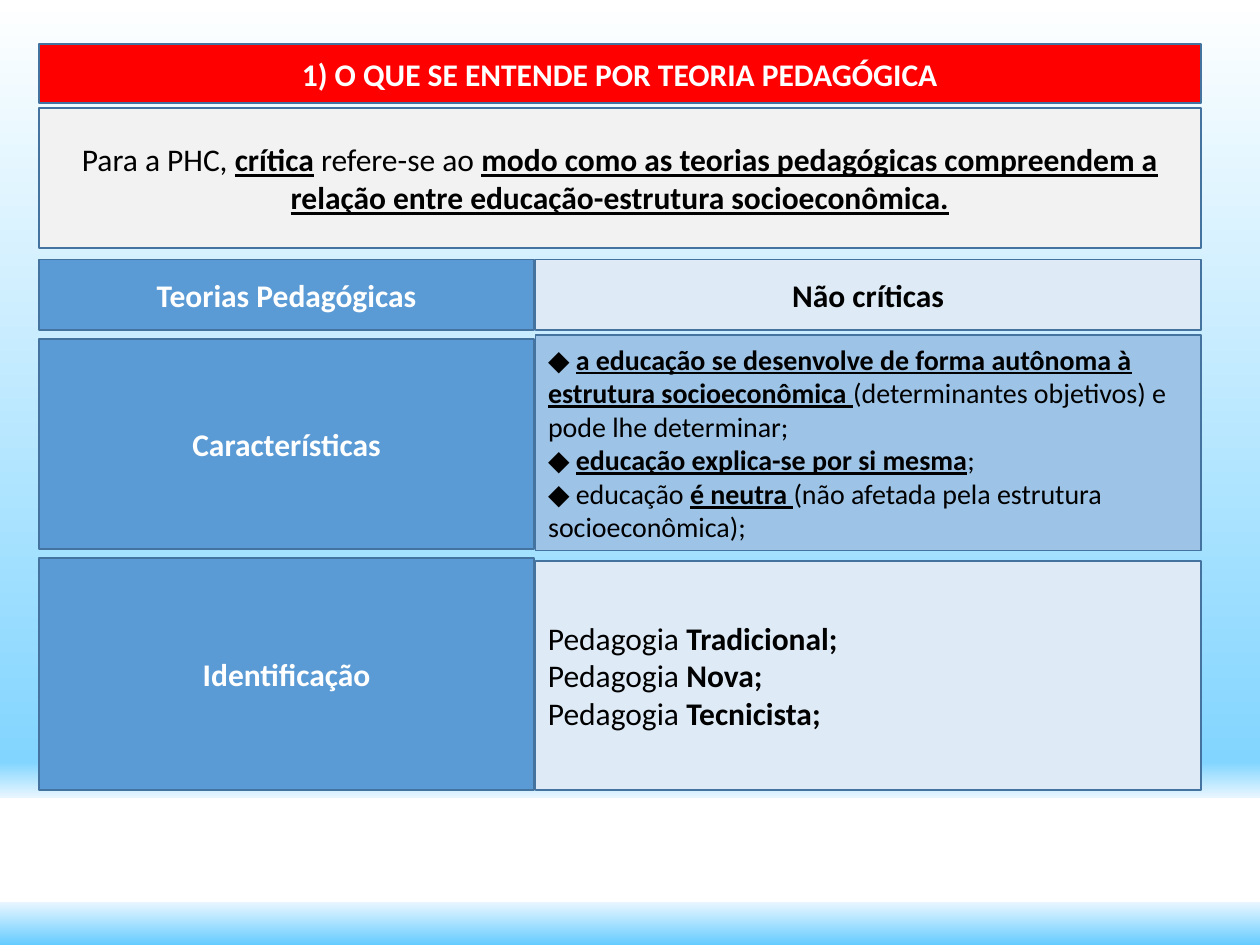
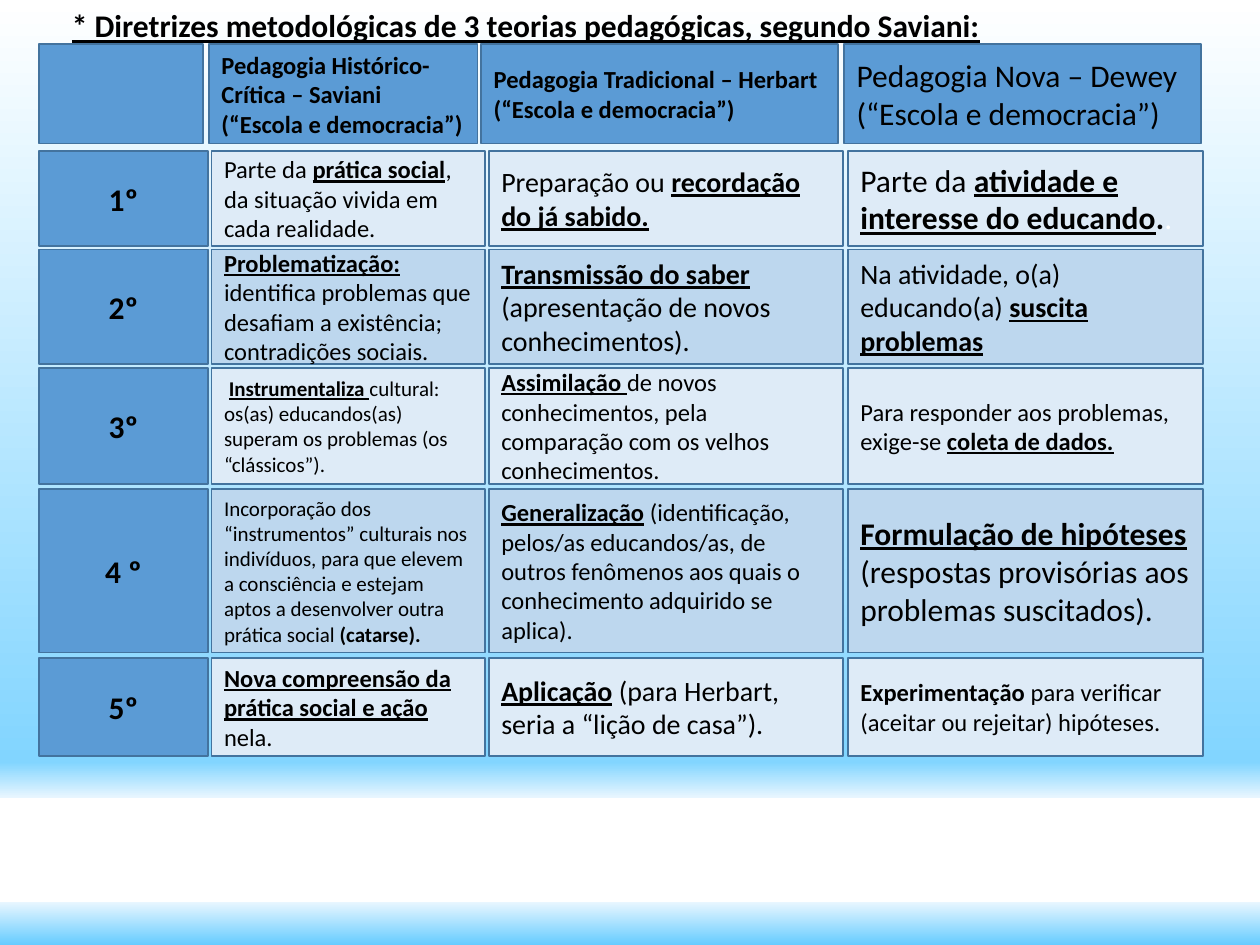
from lxml import etree
from pptx import Presentation
from pptx.dml.color import RGBColor
from pptx.enum.shapes import MSO_SHAPE
from pptx.enum.text import MSO_ANCHOR, MSO_AUTO_SIZE, PP_ALIGN
from pptx.oxml.ns import qn
from pptx.util import Inches, Pt

RECT = MSO_SHAPE.RECTANGLE
TOP, MIDDLE = MSO_ANCHOR.TOP, MSO_ANCHOR.MIDDLE
LEFT, CENTER = PP_ALIGN.LEFT, PP_ALIGN.CENTER
FIXED = MSO_AUTO_SIZE.NONE

WHITE = RGBColor(0xFF, 0xFF, 0xFF)
BLACK = RGBColor(0, 0, 0)
RED = RGBColor(0xFF, 0, 0)
GRAY = RGBColor(0xF2, 0xF2, 0xF2)
SKY = RGBColor(0x66, 0xCC, 0xFF)
AZURE = RGBColor(0x82, 0xD5, 0xFF)
MIST = RGBColor(0xE8, 0xF6, 0xFF)
BLUE = RGBColor(0x5B, 0x9B, 0xD5)
MID = RGBColor(0x9D, 0xC3, 0xE6)
SOFT = RGBColor(0xBD, 0xD7, 0xEE)
PALE = RGBColor(0xDE, 0xEB, 0xF7)
EDGE = RGBColor(0x43, 0x73, 0x9E)

FONT = "Calibri"
WIDTH, HEIGHT = 10, 7.5
EDGE_X, FULL = 0.31, 9.22

BANDS = [
    (0, 6.05, WHITE, AZURE),
    (6.05, 6.33, AZURE, MIST),
    (6.33, 7.16, WHITE, WHITE),
    (7.16, HEIGHT, MIST, SKY),
]

PAIR = [(EDGE_X, 3.93), (4.25, 5.28)]
TRAITS = [
    "◆ |_a educação se desenvolve de forma autônoma à estrutura socioeconômica "
    "|(determinantes objetivos) e pode lhe determinar;",
    "◆ |_educação explica-se por si mesma|;",
    "◆ educação |_é neutra |(não afetada pela estrutura socioeconômica);",
]
KINDS = [f"Pedagogia |!{name};" for name in ("Tradicional", "Nova", "Tecnicista")]

HEADS = [
    ((EDGE_X, 1.3), 14, ""),
    ((1.66, 2.13), 14, "!Pedagogia Histórico-Crítica – Saviani (“Escola e democracia”)"),
    ((3.82, 2.83), 14, "!Pedagogia Tradicional – Herbart (“Escola e democracia”)"),
    ((6.7, 2.83), 18, "Pedagogia Nova – Dewey (“Escola e democracia”)"),
]
COLS = [(1.68, 2.17), (3.88, 2.81), (6.73, 2.82)]
STEPS = [
    ("1º", (1.2, 0.75), [
        (14, "Parte da |_prática social|, da situação vivida em cada realidade."),
        (16, "Preparação ou |_recordação do já sabido."),
        (18, "Parte da |_atividade e interesse do educando|!.|~."),
    ]),
    ("2º", (1.98, 0.91), [
        (14, "_Problematização: |identifica problemas que desafiam a existência; "
             "contradições sociais."),
        (16, "_Transmissão do saber |(apresentação de novos conhecimentos)."),
        (16, "Na atividade, o(a) educando(a) |_suscita problemas"),
    ]),
    ("3º", (2.92, 0.92), [
        (12, " |_Instrumentaliza |cultural: os(as) educandos(as) superam os "
             "problemas (os “clássicos”)."),
        (14, "_Assimilação |de novos conhecimentos, pela comparação com os "
             "velhos conhecimentos."),
        (14, "Para responder aos problemas, exige-se |_coleta de dados."),
    ]),
    ("4 º", (3.88, 1.3), [
        (12, "Incorporação dos “instrumentos” culturais nos indivíduos, para que "
             "elevem a consciência e estejam aptos a desenvolver outra prática "
             "social |!(catarse)."),
        (14, "_Generalização| (identificação, pelos/as educandos/as, de outros "
             "fenômenos aos quais o conhecimento adquirido se aplica)."),
        (18, "_Formulação de hipóteses |(respostas provisórias aos problemas "
             "suscitados)."),
    ]),
    ("5º", (5.22, 0.78), [
        (14, "_Nova compreensão da prática social e ação |nela."),
        (16, "_Aplicação| (para Herbart, seria a “lição de casa”)."),
        (14, "!Experimentação| para verificar (aceitar ou rejeitar) hipóteses."),
    ]),
]


def add_runs(para, text):
    """Split text at bars; a leading _ ! or ~ marks underlined bold, bold or white."""
    for part in text.split("|"):
        mark = part[:1]
        run = para.add_run()
        run.text = part[1:] if mark in ("_", "!", "~") else part
        run.font.bold = mark in ("_", "!")
        run.font.underline = mark == "_"
        if mark == "~":
            run.font.color.rgb = WHITE


def write(shape, lines, size, color=BLACK, align=LEFT, anchor=MIDDLE):
    """Fill a shape with marked lines of text."""
    frame = shape.text_frame
    frame.word_wrap = True
    frame.auto_size = FIXED
    frame.vertical_anchor = anchor
    for i, line in enumerate(lines):
        para = frame.add_paragraph() if i else frame.paragraphs[0]
        if shape.is_placeholder:
            props = para._p.get_or_add_pPr()
            props.set("marL", "0")
            props.set("indent", "0")
            etree.SubElement(props, qn("a:buNone"))
            para.space_before = Pt(0)
        para.alignment = align
        para.font.name = FONT
        para.font.size = Pt(size)
        para.font.color.rgb = color
        add_runs(para, line)


def place(shape, col, row):
    """Put a shape on the crossing of a column and a row."""
    shape.left, shape.width = (Inches(n) for n in col)
    shape.top, shape.height = (Inches(n) for n in row)


def paint(shape, fill):
    """Give a shape a flat fill and the common edge."""
    shape.fill.solid()
    shape.fill.fore_color.rgb = fill
    shape.line.color.rgb = EDGE
    shape.line.width = Pt(1)


def add_cell(slide, col, row, fill, lines, size=18, **style):
    """Add a filled box with text."""
    box = slide.shapes.add_shape(RECT, *(Inches(n) for n in (col[0], row[0], col[1], row[1])))
    box.shadow.inherit = False
    paint(box, fill)
    if any(lines):
        write(box, lines, size, **style)


def add_bands(deck, slide):
    """Draw the sky bands and move them to the master, behind everything."""
    first = deck.slide_master.shapes[0].element
    for i, (top, end, start, stop) in enumerate(BANDS):
        band = slide.shapes.add_shape(RECT, 0, Inches(top), Inches(WIDTH), Inches(end - top))
        band.shadow.inherit = False
        band.line.fill.background()
        band.fill.gradient()
        band.fill.gradient_angle = 270
        for point, color in zip(band.fill.gradient_stops, (start, stop)):
            point.color.rgb = color
        band.element.nvSpPr.cNvPr.set("id", str(100 + i))
        first.addprevious(band.element)


def add_theory(slide):
    """Build the slide on what a pedagogical theory is."""
    title, body = slide.placeholders
    full = (EDGE_X, FULL)
    place(title, full, (0.35, 0.47))
    paint(title, RED)
    write(title, ["!1) O QUE SE ENTENDE POR TEORIA PEDAGÓGICA"], 18, WHITE, CENTER)
    add_cell(slide, full, (0.86, 1.11), GRAY, [
        "Para a PHC, |_crítica| refere-se ao |_modo como as teorias pedagógicas "
        "compreendem a relação entre educação-estrutura socioeconômica."], align=CENTER)
    names = ["Teorias Pedagógicas", "Características", "Identificação"]
    rows = [(2.06, 0.56), (2.69, 1.67), (4.43, 1.84)]
    for name, row in zip(names, rows):
        add_cell(slide, PAIR[0], row, BLUE, ["!" + name], color=WHITE, align=CENTER)
    add_cell(slide, PAIR[1], rows[0], PALE, ["!Não críticas"], align=CENTER)
    place(body, PAIR[1], (2.66, 1.71))
    paint(body, MID)
    write(body, TRAITS, 16)
    add_cell(slide, PAIR[1], (4.45, 1.82), PALE, KINDS)


def add_guide(slide):
    """Build the grid that compares three theories step by step."""
    title = slide.shapes.title
    place(title, (0.47, FULL), (0, 0.4))
    write(title, ["_* Diretrizes metodológicas de 3 teorias pedagógicas, segundo Saviani:"],
          18, anchor=TOP)
    for col, size, text in HEADS:
        add_cell(slide, col, (0.35, 0.79), BLUE, [text], size)
    for i, (step, row, cells) in enumerate(STEPS):
        add_cell(slide, (EDGE_X, 1.34), row, BLUE, ["!" + step], align=CENTER)
        for col, (size, text) in zip(COLS, cells):
            add_cell(slide, col, row, SOFT if i % 2 else PALE, [text], size)


def main():
    """Build and save the deck."""
    deck = Presentation()
    deck.slide_width, deck.slide_height = Inches(WIDTH), Inches(HEIGHT)
    theory = deck.slides.add_slide(deck.slide_layouts[1])
    add_bands(deck, theory)
    add_theory(theory)
    add_guide(deck.slides.add_slide(deck.slide_layouts[5]))
    deck.save("out.pptx")


if __name__ == "__main__":
    main()
